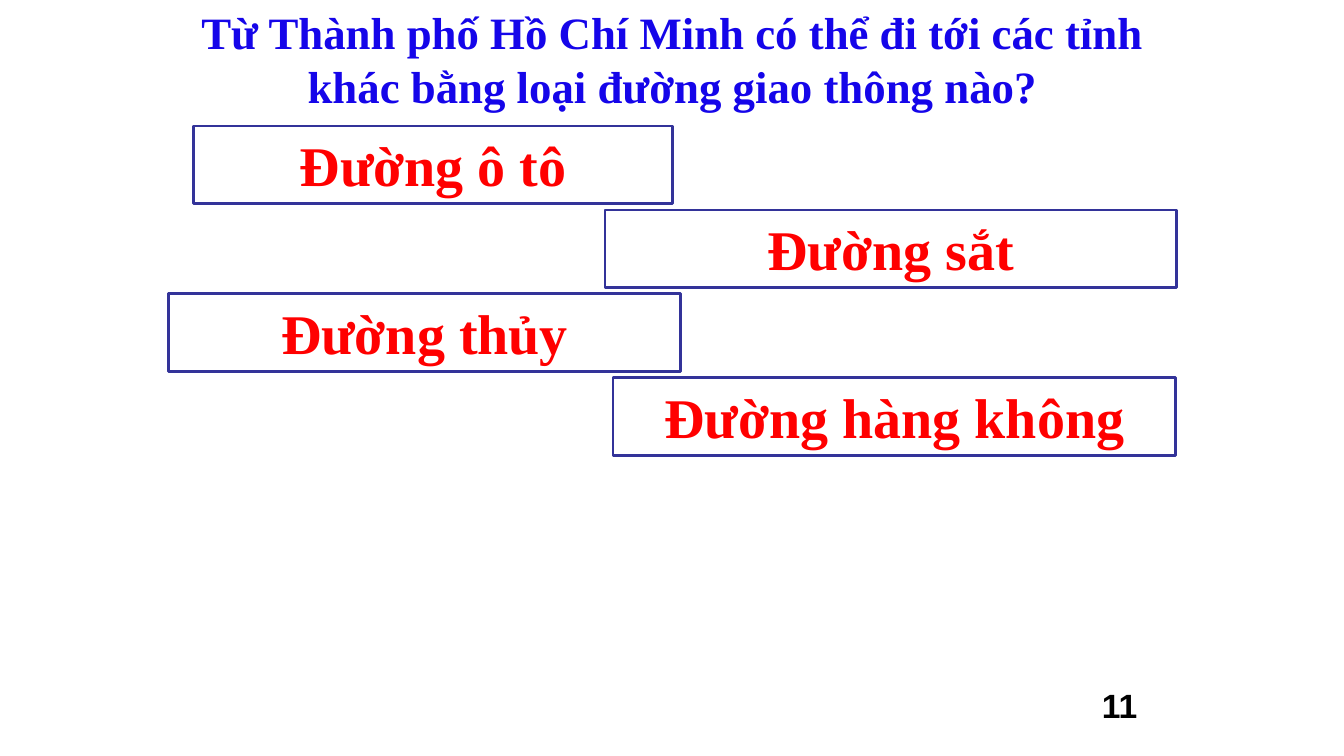
from pptx import Presentation
from pptx.dml.color import RGBColor
from pptx.enum import shapes, text
from pptx.util import Inches, Pt

BLUE = RGBColor(0x15, 0x05, 0xE9)
RED = RGBColor(0xFF, 0x00, 0x00)
BLACK = RGBColor(0x00, 0x00, 0x00)
WHITE = RGBColor(0xFF, 0xFF, 0xFF)
NAVY = RGBColor(0x33, 0x33, 0x99)

QUESTION = ("Từ Thành phố Hồ Chí Minh có thể đi tới các tỉnh "
            "khác bằng loại đường giao thông nào?")
# Answer, left edge and width in inches
ROUTES = [
    ("Đường ô tô", 1.92, 4.75),
    ("Đường sắt", 6, 5.67),
    ("Đường thủy", 1.67, 5.08),
    ("Đường hàng không", 6.08, 5.58),
]
FIRST_ROUTE_TOP = 1.25
ROUTE_STEP = 0.833
ROUTE_HEIGHT = 0.77


def write_text(shape, content, *, size, color, font="Times New Roman",
               align=text.PP_ALIGN.CENTER, anchor=text.MSO_ANCHOR.TOP):
    frame = shape.text_frame
    frame.word_wrap = True
    frame.auto_size = text.MSO_AUTO_SIZE.NONE
    frame.vertical_anchor = anchor
    paragraph = frame.paragraphs[0]
    paragraph.alignment = align
    paragraph.line_spacing = 1.0
    paragraph.space_before = Pt(0)
    run = paragraph.add_run()
    run.text = content
    run.font.name = font
    run.font.size = Pt(size)
    run.font.bold = True
    run.font.color.rgb = color


def add_title(slide):
    title = slide.shapes.title
    title.left, title.top = Inches(1.67), Inches(0)
    title.width, title.height = Inches(10), Inches(1.18)
    write_text(title, QUESTION, size=32, color=BLUE)


def add_route(slide, name, left, top, width):
    """Add one outlined answer box."""
    box = slide.shapes.add_shape(
        shapes.MSO_SHAPE.RECTANGLE, Inches(left), Inches(top),
        Inches(width), Inches(ROUTE_HEIGHT))
    box.shadow.inherit = False
    box.fill.solid()
    box.fill.fore_color.rgb = WHITE
    box.line.color.rgb = NAVY
    box.line.width = Pt(2)
    write_text(box, name, size=40, color=RED)


def add_page_number(slide, number):
    box = slide.shapes.add_textbox(
        Inches(10.83), Inches(6.75), Inches(0.67), Inches(0.5))
    write_text(box, number, size=24, color=BLACK, font="Arial",
               align=text.PP_ALIGN.LEFT)


def main():
    presentation = Presentation()
    presentation.slide_width = Inches(13.33)
    presentation.slide_height = Inches(7.5)
    title_only = presentation.slide_layouts.get_by_name("Title Only")
    slide = presentation.slides.add_slide(title_only)

    add_title(slide)
    for index, (name, left, width) in enumerate(ROUTES):
        add_route(slide, name, left, FIRST_ROUTE_TOP + index * ROUTE_STEP, width)
    add_page_number(slide, "11")

    presentation.save("out.pptx")


if __name__ == "__main__":
    main()
